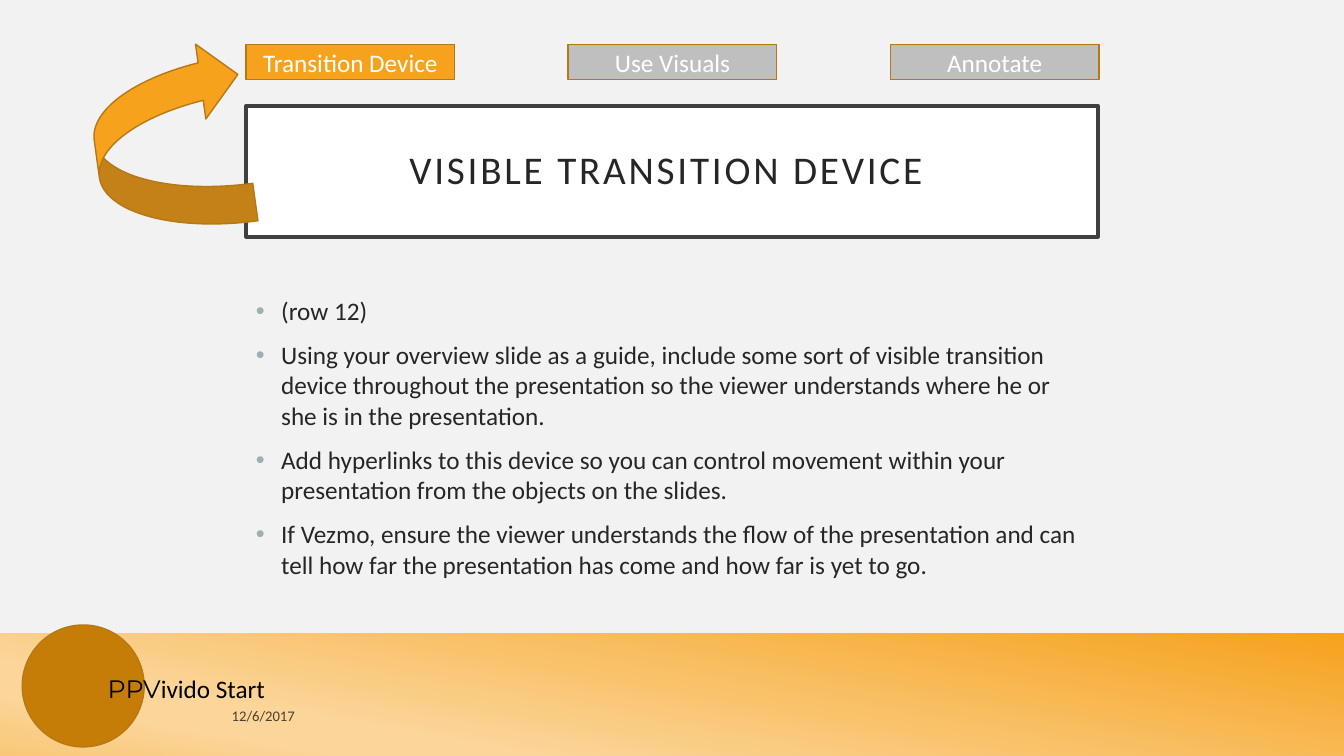
from dataclasses import dataclass, field

from lxml.etree import SubElement
from pptx import Presentation
from pptx.dml.color import RGBColor
from pptx.enum.shapes import MSO_SHAPE
from pptx.enum.text import MSO_ANCHOR, PP_ALIGN
from pptx.oxml import parse_xml
from pptx.oxml.ns import nsdecls, qn
from pptx.util import Inches, Pt


@dataclass(frozen=True)
class Theme:
    page: str = "F2F2F2"
    accent: str = "F6A21D"
    accent_edge: str = "B67815"
    badge: str = "C67D08"
    inactive: str = "BFBFBF"
    white: str = "FFFFFF"
    frame: str = "404040"
    ink: str = "262626"
    black: str = "000000"
    bullet: str = "9BAFB5"
    font: str = "Calibri"
    brand_font: str = "Montserrat"
    title_size: float = 28
    text_size: float = 18
    date_size: float = 10.5
    band_stops: tuple = ((0, "F6A21D"), (74, "FBD599"), (83, "FBD599"), (100, "FAC777"))
    band_angle: int = 100


THEME = Theme()


@dataclass(frozen=True)
class Area:
    left: float
    top: float
    width: float
    height: float

    def lengths(self):
        return [Inches(value) for value in (self.left, self.top, self.width, self.height)]


@dataclass(frozen=True)
class Panel:
    area: Area
    fill: str = THEME.accent
    line: str = THEME.accent_edge
    line_width: float = 1
    kind: MSO_SHAPE = MSO_SHAPE.RECTANGLE


@dataclass(frozen=True)
class Words:
    text: str
    color: str
    size: float = THEME.text_size
    font: str = THEME.font


@dataclass(frozen=True)
class Tab:
    label: str
    fill: str = THEME.inactive


@dataclass(frozen=True)
class Label:
    area: Area
    words: tuple
    frame: dict = field(default_factory=dict)


def apply(target, values: dict) -> None:
    for name, value in values.items():
        setattr(target, name, value)


def draw_panel(page, panel: Panel):
    box = page.shapes.add_shape(panel.kind, *panel.area.lengths())
    box.shadow.inherit = False
    box.fill.solid()
    box.fill.fore_color.rgb = RGBColor.from_string(panel.fill)
    box.line.color.rgb = RGBColor.from_string(panel.line)
    box.line.width = Pt(panel.line_width)
    return box


def draw_band(page, area: Area) -> None:
    band = draw_panel(page, Panel(area))
    band.line.fill.background()
    band.fill.gradient()
    gradient = band.element.spPr.find(qn("a:gradFill"))
    stops = "".join(
        f'<a:gs pos="{position * 1000}"><a:srgbClr val="{color}"/></a:gs>'
        for position, color in THEME.band_stops
    )
    gradient.getparent().replace(gradient, parse_xml(
        f'<a:gradFill {nsdecls("a")} rotWithShape="1"><a:gsLst>{stops}</a:gsLst>'
        f'<a:lin ang="{THEME.band_angle * 60000}" scaled="0"/></a:gradFill>'
    ))


def write(para, words: Words):
    span = para.add_run()
    span.text = words.text
    apply(span.font, {"name": words.font, "size": Pt(words.size)})
    span.font.color.rgb = RGBColor.from_string(words.color)
    return span


def draw_label(page, label: Label) -> list:
    box = page.shapes.add_textbox(*label.area.lengths())
    apply(box.text_frame, {"word_wrap": True, **label.frame})
    return [write(box.text_frame.paragraphs[0], words) for words in label.words]


def draw_tabs(page, tabs: list) -> None:
    first, pitch = 2.44, 3.195
    for index, tab in enumerate(tabs):
        area = Area(first + index * pitch, 0.44, 2.07, 0.35)
        box = draw_panel(page, Panel(area, tab.fill))
        apply(box.text_frame, {"word_wrap": True, "vertical_anchor": MSO_ANCHOR.MIDDLE})
        para = box.text_frame.paragraphs[0]
        para.alignment = PP_ALIGN.CENTER
        write(para, Words(tab.label, THEME.white))


def draw_title(page, text: str) -> None:
    box = draw_panel(page, Panel(Area(2.44, 1.05, 8.45, 1.3), THEME.white, THEME.frame, 2.5))
    margins = {f"margin_{side}": Inches(0.2) for side in ("left", "top", "right", "bottom")}
    apply(box.text_frame, {"word_wrap": True, "vertical_anchor": MSO_ANCHOR.MIDDLE, **margins})
    para = box.text_frame.paragraphs[0]
    apply(para, {"alignment": PP_ALIGN.CENTER, "line_spacing": 0.9})
    span = write(para, Words(text, THEME.ink, THEME.title_size))
    span.font._element.set("spc", "200")


def draw_bullets(page, items: list) -> None:
    box = page.shapes.add_textbox(*Area(2.44, 2.88, 8.45, 3.39).lengths())
    box.text_frame.word_wrap = True
    for index, item in enumerate(items):
        para = box.text_frame.add_paragraph() if index else box.text_frame.paragraphs[0]
        para.space_before = Pt(10 if index else 0)
        settings = para._p.get_or_add_pPr()
        settings.set("marL", str(Inches(0.25)))
        settings.set("indent", str(-Inches(0.25)))
        color = SubElement(settings, qn("a:buClr"))
        SubElement(color, qn("a:srgbClr")).set("val", THEME.bullet)
        SubElement(settings, qn("a:buFont")).set("typeface", "Arial")
        SubElement(settings, qn("a:buChar")).set("char", "•")
        write(para, Words(item, THEME.ink))


def draw_return_arrow(page) -> None:
    arrow = draw_panel(page, Panel(Area(0.94, 0.46, 1.5, 1.84), kind=MSO_SHAPE.CURVED_RIGHT_ARROW))
    arrow.rotation = 172.2
    arrow.element.spPr.find(qn("a:xfrm")).set("flipH", "1")


def draw_footer(page) -> None:
    draw_band(page, Area(0, 6.28, 13.33, 1.22))
    draw_panel(page, Panel(Area(0.22, 6.2, 1.21, 1.21), THEME.badge, kind=MSO_SHAPE.OVAL))
    draw_label(page, Label(
        Area(0.97, 6.63, 1.93, 0.71),
        (Words("PPV", THEME.black, font=THEME.brand_font), Words("ivido Start", THEME.black)),
        {"word_wrap": False},
    ))
    date = Label(
        Area(2.2, 6.92, 0.88, 0.35),
        (Words("12/6/2017", THEME.black, THEME.date_size),),
        {"vertical_anchor": MSO_ANCHOR.MIDDLE},
    )
    for span in draw_label(page, date):
        color = span.font._element.find(".//" + qn("a:srgbClr"))
        SubElement(color, qn("a:alpha")).set("val", "70000")


def main() -> None:
    deck = Presentation()
    apply(deck, {"slide_width": Inches(13.33), "slide_height": Inches(7.5)})
    page = deck.slides.add_slide(deck.slide_layouts[6])
    page.background.fill.solid()
    page.background.fill.fore_color.rgb = RGBColor.from_string(THEME.page)
    draw_footer(page)
    draw_title(page, "VISIBLE TRANSITION DEVICE ")
    draw_bullets(page, [
        "(row 12)",
        "Using your overview slide as a guide, include some sort of visible transition device "
        "throughout the presentation so the viewer understands where he or she is in the presentation.",
        "Add hyperlinks to this device so you can control movement within your presentation "
        "from the objects on the slides.",
        "If Vezmo, ensure the viewer understands the flow of the presentation and can tell "
        "how far the presentation has come and how far is yet to go.",
    ])
    draw_tabs(page, [Tab("Transition Device", THEME.accent), Tab("Use Visuals"), Tab("Annotate")])
    draw_return_arrow(page)
    deck.save("out.pptx")


if __name__ == "__main__":
    main()
